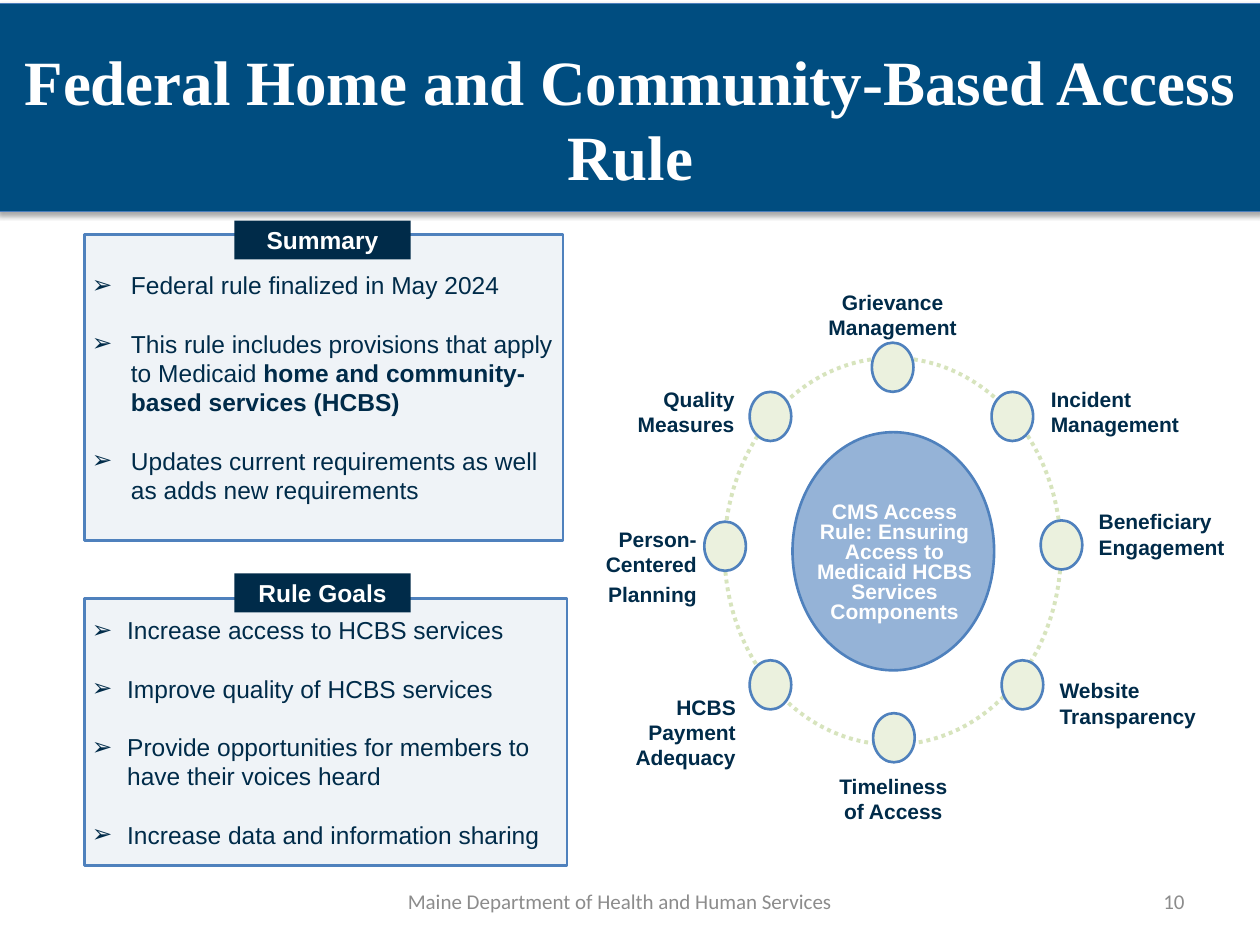
"""Build the slide on the Federal Home and Community-Based Access Rule."""
from lxml import etree
from pptx import Presentation
from pptx.dml.color import RGBColor
from pptx.enum.dml import MSO_LINE
from pptx.enum.shapes import MSO_SHAPE
from pptx.enum.text import MSO_ANCHOR, PP_ALIGN
from pptx.oxml.ns import qn
from pptx.util import Inches, Pt

RECT, OVAL = MSO_SHAPE.RECTANGLE, MSO_SHAPE.OVAL
LEFT, CENTER, RIGHT = PP_ALIGN.LEFT, PP_ALIGN.CENTER, PP_ALIGN.RIGHT
TOP, MIDDLE = MSO_ANCHOR.TOP, MSO_ANCHOR.MIDDLE
DOTTED = MSO_LINE.ROUND_DOT

COLORS = {
    "banner": "004D80", "banner edge": "4B7EBC", "navy": "002B49", "panel": "EFF3F7",
    "edge": "4F81BD", "ring": "D7E4BD", "node": "EBF1DE", "hub": "95B3D7",
    "white": "FFFFFF", "footer": "8C8C8C", "shadow": "000000",
}

TITLE = "Federal Home and Community-Based Access Rule"
FOOTER = "Maine Department of Health and Human Services"
PAGE = "10"
HUB = "CMS Access Rule: Ensuring Access to Medicaid HCBS Services Components"

PANELS = [
    {"heading": "Summary", "place": (6.7, 18.6, 38, 24.3), "tab_top": 17.5, "indent": 0.31,
     "points": [
         ["Federal rule finalized in May 2024"],
         ["This rule includes provisions that apply to Medicaid ",
          ("home and community-based services (HCBS)", True)],
         ["Updates current requirements as well as adds new requirements"],
     ]},
    {"heading": "Rule Goals", "place": (6.7, 47.5, 38.3, 21.2), "tab_top": 45.5, "indent": 0.28,
     "points": [
         ["Increase access to HCBS services"],
         ["Improve quality of HCBS services"],
         ["Provide opportunities for members to have their voices heard"],
         ["Increase data and information sharing"],
     ]},
]

COMPONENTS = [
    (["Grievance Management"], (69.2, 27.2), (65, 23, 11.7, 3.8), CENTER),
    (["Incident Management"], (78.7, 31.1), (83.4, 30.7, 11.3, 3.7), LEFT),
    (["Beneficiary Engagement"], (82.6, 41.3), (87.2, 40.4, 11.7, 3.7), LEFT),
    (["Website Transparency"], (79.5, 52.4), (84.1, 53.8, 11.7, 3.7), LEFT),
    (["Timeliness of Access"], (69.3, 56.6), (66.5, 61.4, 8.8, 4.3), CENTER),
    (["HCBS Payment Adequacy"], (59.5, 52.4), (48.7, 55.1, 9.7, 5.6), RIGHT),
    (["Person-Centered", "Planning"], (55.9, 41.4), (46.2, 41.8, 9.1, 5.9), RIGHT),
    (["Quality Measures"], (59.5, 31.1), (50.3, 30.7, 8, 3.7), RIGHT),
]
NODE_SIZE = (3.3, 3.9)

deck = Presentation()
deck.slide_width, deck.slide_height = Inches(10), Inches(7.5)
COLUMN, ROW = deck.slide_width / 100, deck.slide_height / 75
slide = deck.slides.add_slide(deck.slide_layouts[6])


def color(name):
    return RGBColor.from_string(COLORS[name])


def on_grid(place):
    left, top, width, height = place
    return [round(v) for v in (left * COLUMN, top * ROW, width * COLUMN, height * ROW)]


def draw(shapes, kind, place, fill=None, line=None, weight=1.5, dash=None):
    drawn = shapes.add_shape(kind, *on_grid(place))
    drawn.shadow.inherit = False
    if fill:
        drawn.fill.solid()
        drawn.fill.fore_color.rgb = color(fill)
    else:
        drawn.fill.background()
    if line:
        drawn.line.color.rgb = color(line)
        drawn.line.width = Pt(weight)
        if dash:
            drawn.line.dash_style = dash
    else:
        drawn.line.fill.background()
    return drawn


def write(holder, paragraphs, size=12, font="Arial", ink="navy", bold=False, align=LEFT,
          anchor=TOP, inset=0.0, top_inset=None, gap=0, spacing=None, indent=None):
    frame = holder.text_frame
    frame.word_wrap = True
    frame.vertical_anchor = anchor
    frame.margin_left = frame.margin_right = frame.margin_bottom = Inches(inset)
    frame.margin_top = Inches(inset if top_inset is None else top_inset)
    for index, runs in enumerate(paragraphs):
        paragraph = frame.add_paragraph() if index else frame.paragraphs[0]
        paragraph.alignment = align
        if indent:
            properties = paragraph._p.get_or_add_pPr()
            properties.set("marL", str(Inches(indent)))
            properties.set("indent", str(-Inches(indent)))
            etree.SubElement(properties, qn("a:buFont"), typeface="Arial")
            etree.SubElement(properties, qn("a:buChar"), char="➢")
        if index and gap:
            paragraph.space_before = Pt(gap)
        if spacing:
            paragraph.line_spacing = spacing
        for part in [runs] if isinstance(runs, str) else runs:
            text, strong = (part, bold) if isinstance(part, str) else part
            run = paragraph.add_run()
            run.text = text
            run.font.name, run.font.size, run.font.bold = font, Pt(size), strong
            run.font.color.rgb = color(ink)


def write_at(shapes, place, paragraphs, **style):
    write(shapes.add_textbox(*on_grid(place)), paragraphs, **style)


def cast_shadow(holder):
    effects = holder._element.spPr.find(qn("a:effectLst"))
    shadow = etree.SubElement(effects, qn("a:outerShdw"), blurRad=str(Pt(3.1)),
                              dist=str(Pt(1.8)), dir="5400000", rotWithShape="0")
    tint = etree.SubElement(shadow, qn("a:srgbClr"), val=COLORS["shadow"])
    etree.SubElement(tint, qn("a:alpha"), val="35000")


banner = draw(slide.shapes, RECT, (-0.1, 0.3, 100.2, 16.5), "banner", "banner edge", 0.75)
cast_shadow(banner)
write(banner, [TITLE], size=36, font="Times New Roman", ink="white", bold=True,
      align=CENTER, anchor=MIDDLE, inset=0.05, top_inset=0.21)

footer_style = {"font": "Calibri", "ink": "footer", "anchor": MIDDLE, "inset": 0.1}
write_at(slide.shapes, (71.7, 69.5, 23.3, 4), [PAGE], align=RIGHT, **footer_style)
write_at(slide.shapes, (29.2, 69.5, 40, 4), [FOOTER], align=CENTER, **footer_style)

for panel in PANELS:
    body = draw(slide.shapes, RECT, panel["place"], "panel", "edge")
    write(body, panel["points"], size=14, anchor=MIDDLE, inset=0.06, gap=16.5,
          indent=panel["indent"])
    tab = draw(slide.shapes, RECT, (18.6, panel["tab_top"], 14, 3.1), "navy")
    write(tab, [panel["heading"]], size=14, ink="white", bold=True, align=CENTER,
          anchor=MIDDLE, inset=0.06)

wheel = slide.shapes.add_group_shape().shapes
draw(wheel, OVAL, (57.5, 28.4, 26.7, 30.7), line="ring", weight=2.25, dash=DOTTED)
draw(wheel, OVAL, (62.9, 34.3, 16, 18.9), "hub", "edge")
write_at(wheel, (63.1, 39.5, 15.8, 9.8), [HUB], ink="white", bold=True, align=CENTER,
         inset=0.1, top_inset=0.05, spacing=0.79)
for label, node, place, align in COMPONENTS:
    draw(wheel, OVAL, node + NODE_SIZE, "node", "edge")
    write_at(wheel, place, label, bold=True, align=align, gap=2.4)

deck.save("out.pptx")
